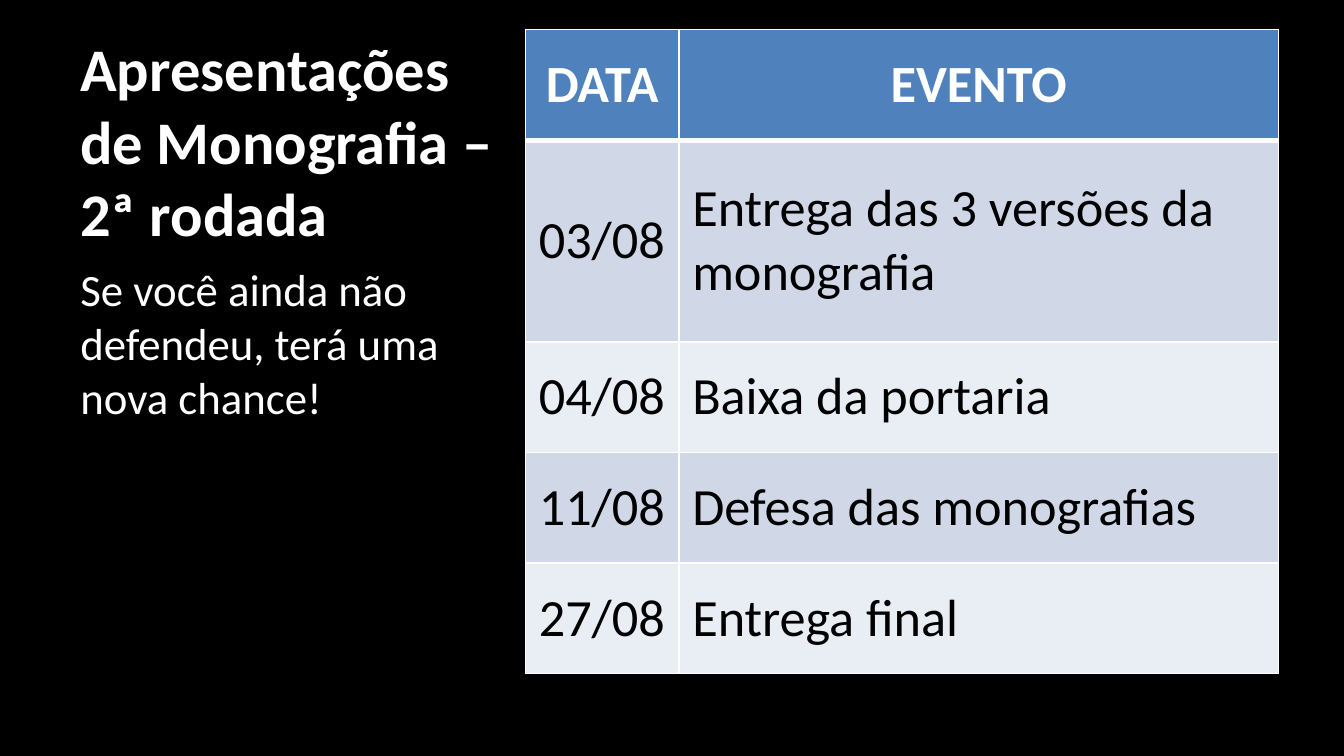
import pptx
import pptx.util
import pptx.dml.color
import pptx.enum.text
import pptx.oxml
import pptx.oxml.ns

Cm = pptx.util.Cm
Pt = pptx.util.Pt
RGBColor = pptx.dml.color.RGBColor
MSO_ANCHOR = pptx.enum.text.MSO_ANCHOR
PP_ALIGN = pptx.enum.text.PP_ALIGN

BLACK = RGBColor(0x00, 0x00, 0x00)
WHITE = RGBColor(0xFF, 0xFF, 0xFF)
HEADER_BLUE = RGBColor(0x4F, 0x81, 0xBD)
BAND_DARK = RGBColor(0xD0, 0xD8, 0xE8)
BAND_LIGHT = RGBColor(0xE9, 0xED, 0xF4)

FONT = "Calibri"
TITLE = "Apresentações de Monografia – 2ª rodada"
MESSAGE = "Se você ainda não defendeu, terá uma nova chance!"
SCHEDULE = [
    ("DATA", "EVENTO"),
    ("03/08", "Entrega das 3 versões da monografia"),
    ("04/08", "Baixa da portaria"),
    ("11/08", "Defesa das monografias"),
    ("27/08", "Entrega final"),
]
COLUMN_WIDTHS = [2.9, 11.33]
ROW_HEIGHTS = [2.09, 3.81, 2.09, 2.09, 2.09]

TOP = 0.56
TEXT_LEFT, TEXT_WIDTH = 1.27, 8.36
TITLE_HEIGHT, MESSAGE_HEIGHT = 4.27, 7.92
TABLE_LEFT = 9.93


def format_paragraph(paragraph, size, color, bold=False, alignment=PP_ALIGN.LEFT):
    paragraph.alignment = alignment
    for run in paragraph.runs:
        run.font.name = FONT
        run.font.size = Pt(size)
        run.font.bold = bold
        run.font.color.rgb = color


def add_text(slide, text, top, height, size, bold, anchor):
    shape = slide.shapes.add_textbox(Cm(TEXT_LEFT), Cm(top), Cm(TEXT_WIDTH), Cm(height))
    frame = shape.text_frame
    frame.word_wrap = True
    frame.vertical_anchor = anchor
    frame.text = text
    format_paragraph(frame.paragraphs[0], size, WHITE, bold)
    return frame.paragraphs[0]


def set_borders(cell, top, bottom):
    properties = cell._tc.get_or_add_tcPr()
    for side, width in (("L", 1), ("R", 1), ("T", top), ("B", bottom)):
        properties.append(pptx.oxml.parse_xml(
            f'<a:ln{side} {pptx.oxml.ns.nsdecls("a")} w="{Pt(width)}">'
            f'<a:solidFill><a:srgbClr val="{WHITE}"/></a:solidFill></a:ln{side}>'
        ))


def add_schedule(slide):
    table = slide.shapes.add_table(
        len(SCHEDULE), len(COLUMN_WIDTHS), Cm(TABLE_LEFT), Cm(TOP),
        Cm(sum(COLUMN_WIDTHS)), Cm(sum(ROW_HEIGHTS)),
    ).table
    table.horz_banding = False
    for column, width in zip(table.columns, COLUMN_WIDTHS):
        column.width = Cm(width)
    for row_index, (row, height) in enumerate(zip(table.rows, ROW_HEIGHTS)):
        row.height = Cm(height)
        header = row_index == 0
        band = BAND_DARK if row_index % 2 else BAND_LIGHT
        for cell, text in zip(row.cells, SCHEDULE[row_index]):
            cell.text = text
            cell.vertical_anchor = MSO_ANCHOR.MIDDLE
            set_borders(cell, 3 if row_index == 1 else 1, 3 if header else 1)
            cell.fill.solid()
            cell.fill.fore_color.rgb = HEADER_BLUE if header else band
            format_paragraph(
                cell.text_frame.paragraphs[0], 28, WHITE if header else BLACK,
                header, PP_ALIGN.CENTER if header else PP_ALIGN.LEFT,
            )


def main():
    presentation = pptx.Presentation()
    presentation.slide_width = Cm(25.4)
    presentation.slide_height = Cm(14.29)
    slide = presentation.slides.add_slide(presentation.slide_layouts[6])
    slide.background.fill.solid()
    slide.background.fill.fore_color.rgb = BLACK

    add_text(slide, TITLE, TOP, TITLE_HEIGHT, 32.4, True, MSO_ANCHOR.BOTTOM)
    add_schedule(slide)
    message = add_text(slide, MESSAGE, TOP + TITLE_HEIGHT, MESSAGE_HEIGHT, 24, False, MSO_ANCHOR.TOP)
    message.space_before = Pt(4.8)

    presentation.save("out.pptx")


if __name__ == "__main__":
    main()
